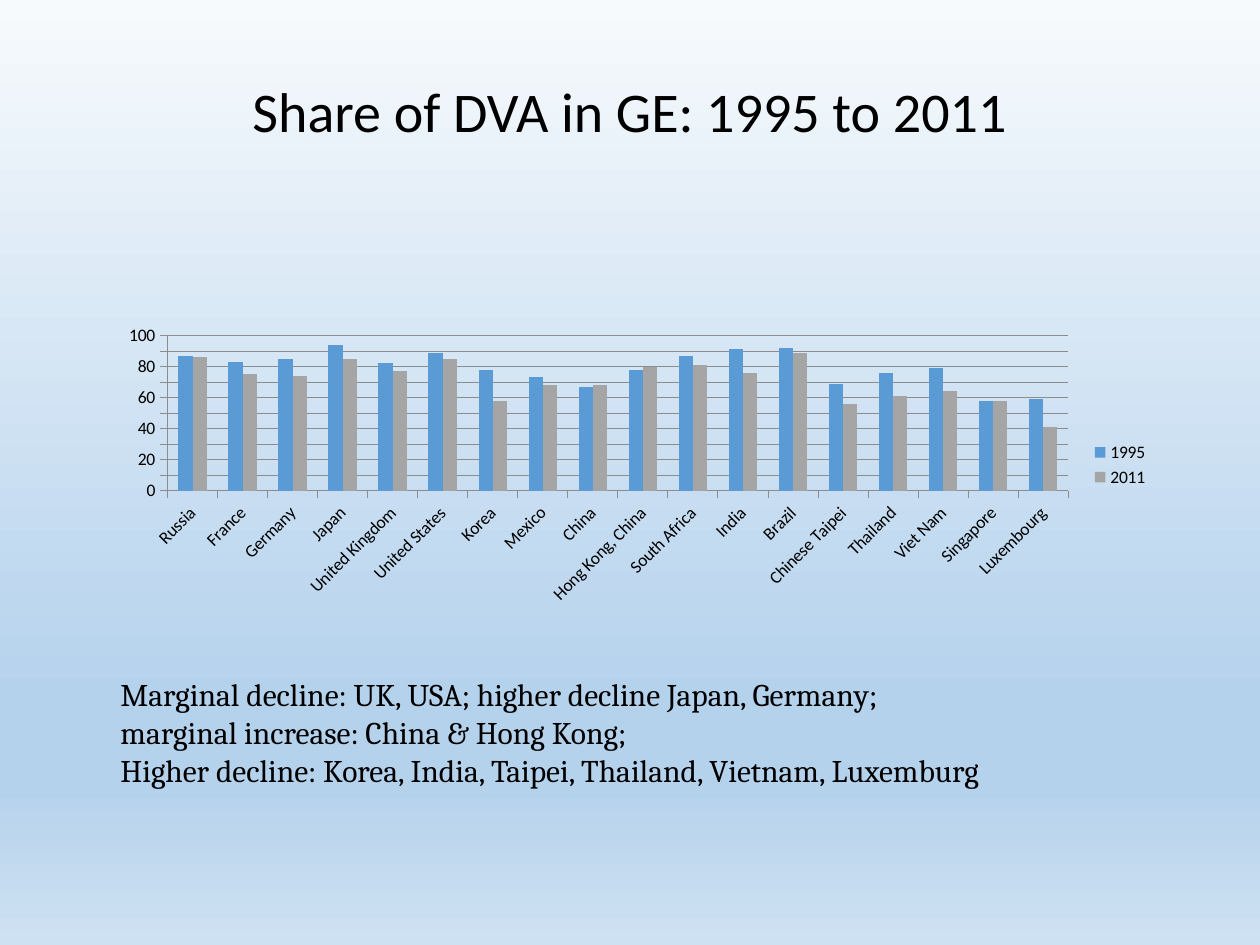
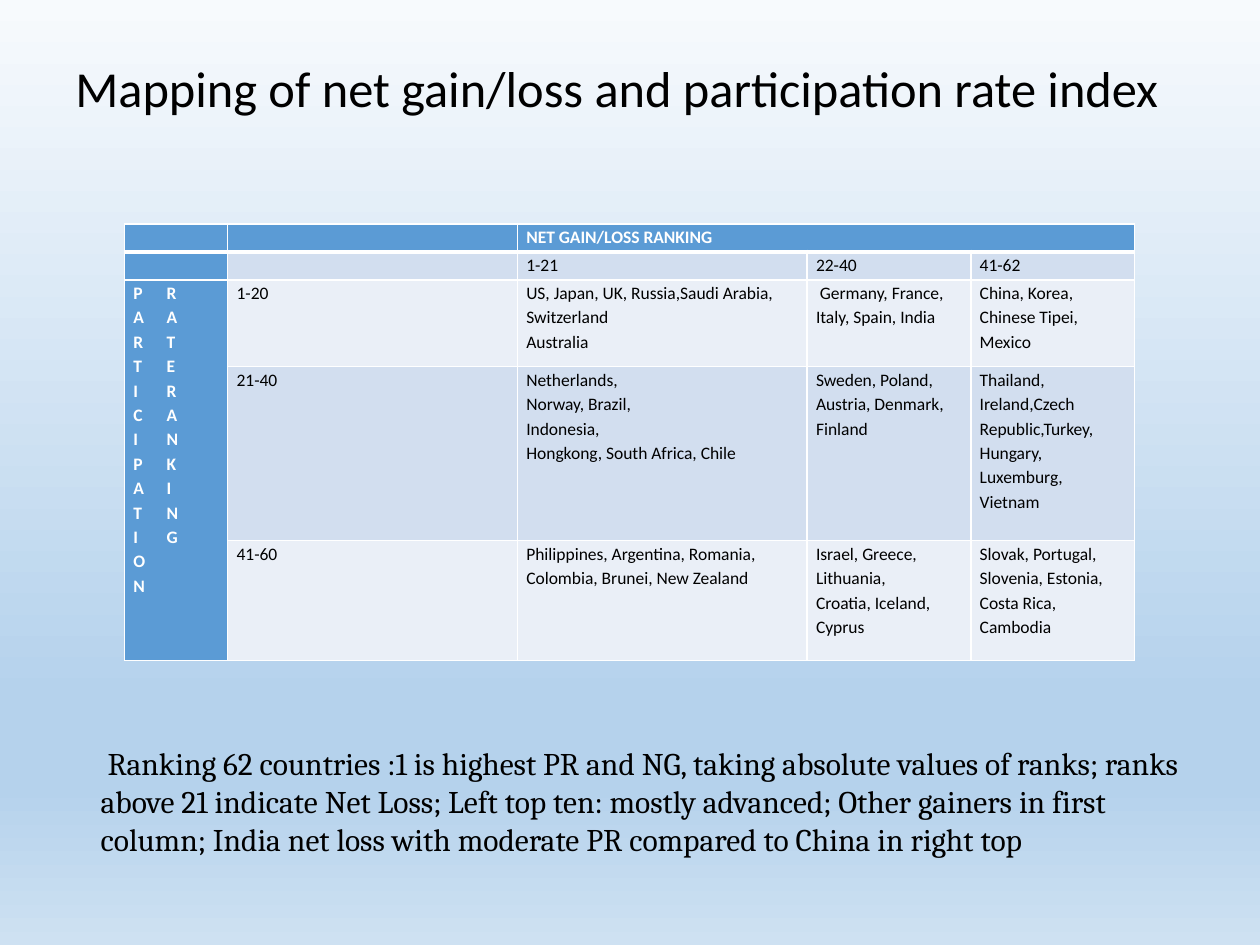
"""Build two slides on domestic value added: a country chart and a ranking table."""
from dataclasses import dataclass
from itertools import zip_longest

from lxml.etree import SubElement
from pptx import Presentation
from pptx.chart.data import CategoryChartData
from pptx.dml.color import RGBColor
from pptx.enum.chart import XL_CHART_TYPE, XL_LEGEND_POSITION, XL_TICK_MARK
from pptx.enum.text import MSO_ANCHOR, PP_ALIGN
from pptx.oxml.ns import qn
from pptx.util import Cm, Pt


@dataclass(frozen=True)
class Theme:
    head_font: str = "Calibri"
    note_font: str = "Cambria"
    text: str = "000000"
    white: str = "FFFFFF"
    accent: str = "5B9BD5"
    grey: str = "A5A5A5"
    axis: str = "8C8C8C"
    bands: tuple = ("D2DEEF", "EAEFF7")
    backdrop: tuple = ((0, "F7FAFD"), (74, "B5D2EC"), (83, "B5D2EC"), (100, "CEE1F2"))
    note_size: float = 18
    small_size: float = 10


T = Theme()

SHARE = {
    "title": "Share of DVA in GE: 1995 to 2011",
    "series": ("1995", "2011"),
    "values": [
        ("Russia", 87, 86), ("France", 83, 75), ("Germany", 85, 74),
        ("Japan", 94, 85), ("United Kingdom", 82, 77), ("United States", 89, 85),
        ("Korea", 78, 58), ("Mexico", 73, 68), ("China", 67, 68),
        ("Hong Kong, China", 78, 80), ("South Africa", 87, 81), ("India", 91, 76),
        ("Brazil", 92, 89), ("Chinese Taipei", 69, 56), ("Thailand", 76, 61),
        ("Viet Nam", 79, 64), ("Singapore", 58, 58), ("Luxembourg", 59, 41),
    ],
    "note": [
        "Marginal decline: UK, USA; higher decline Japan, Germany;",
        "marginal increase: China & Hong Kong;",
        "Higher decline: Korea, India, Taipei, Thailand, Vietnam, Luxemburg",
    ],
}

SIDE_WORDS = ("PARTICIPATION", "RATERANKING")
MAPPING = {
    "title": "Mapping of net gain/loss and participation rate index",
    "columns": (2.08, 5.84, 5.84, 3.3, 3.3),
    "rows": (0.56, 0.56, 1.75, 3.51, 2.41),
    "cells": [
        ["", "", "NET GAIN/LOSS RANKING", "", ""],
        ["", "", "1-21", "22-40", "41-62"],
        ["\n".join("\t".join(pair).rstrip() for pair in zip_longest(*SIDE_WORDS, fillvalue="")),
         "1-20", "US, Japan, UK, Russia,Saudi Arabia, Switzerland\nAustralia",
         " Germany, France, Italy, Spain, India", "China, Korea, Chinese Tipei, Mexico"],
        ["", "21-40", "Netherlands,\nNorway, Brazil,\nIndonesia,\nHongkong, South Africa, Chile",
         "Sweden, Poland, Austria, Denmark, Finland",
         "Thailand, Ireland,Czech Republic,Turkey, Hungary, Luxemburg, Vietnam"],
        ["", "41-60", "Philippines, Argentina, Romania, Colombia, Brunei, New Zealand",
         "Israel, Greece, Lithuania,\nCroatia, Iceland, Cyprus",
         "Slovak, Portugal, Slovenia, Estonia, Costa Rica, Cambodia"],
    ],
    "note": [
        " Ranking 62 countries :1 is highest PR and NG, taking absolute values of ranks; "
        "ranks above 21 indicate Net Loss; Left top ten: mostly advanced; Other gainers in "
        "first column; India net loss with moderate PR compared to China in right top",
    ],
}


def rgb(color):
    return RGBColor.from_string(color)


def style_font(font, name, size, color=T.text, bold=False):
    font.name, font.size, font.bold = name, Pt(size), bold
    font.color.rgb = rgb(color)


def write_lines(tf, lines, spacing=None, align=None, **style):
    for i, line in enumerate(lines):
        p = tf.paragraphs[0] if i == 0 else tf.add_paragraph()
        p.line_spacing, p.alignment = spacing, align
        if line:
            r = p.add_run()
            r.text = line
            style_font(r.font, **style)


def add_text(s, box, lines, anchor=MSO_ANCHOR.TOP, **style):
    tf = s.shapes.add_textbox(*map(Cm, box)).text_frame
    tf.word_wrap, tf.vertical_anchor = True, anchor
    write_lines(tf, lines, **style)


def add_title(s, box, title, size, align=PP_ALIGN.LEFT):
    add_text(s, box, [title], MSO_ANCHOR.MIDDLE, spacing=0.9, align=align,
             name=T.head_font, size=size)


def add_note(s, box, lines):
    add_text(s, box, lines, name=T.note_font, size=T.note_size)


def paint_backdrop(master):
    fill = master.background.fill
    fill.gradient()
    fill.gradient_angle = 270
    stops = master.element.find(".//" + qn("a:gsLst"))
    stops.clear()
    for pos, color in T.backdrop:
        stop = SubElement(stops, qn("a:gs"), pos=str(pos * 1000))
        SubElement(stop, qn("a:srgbClr"), val=color)


def line_style(line):
    line.color.rgb, line.width = rgb(T.axis), Pt(0.5)


def add_share_chart(s, box):
    data = CategoryChartData()
    names, *columns = zip(*SHARE["values"])
    data.categories = names
    for year, values in zip(SHARE["series"], columns):
        data.add_series(year, values)
    chart = s.shapes.add_chart(XL_CHART_TYPE.COLUMN_CLUSTERED, *map(Cm, box), data).chart
    style_font(chart.font, T.head_font, T.small_size)
    chart.has_title = False
    chart.has_legend = True
    chart.legend.position = XL_LEGEND_POSITION.RIGHT
    chart.legend.include_in_layout = False
    style_font(chart.legend.font, T.head_font, T.small_size)

    plot = chart.plots[0]
    plot.gap_width, plot.overlap, plot.vary_by_categories = 150, 0, False
    for series, color in zip(plot.series, (T.accent, T.grey)):
        series.format.fill.solid()
        series.format.fill.fore_color.rgb = rgb(color)

    for axis in (chart.category_axis, chart.value_axis):
        axis.major_tick_mark = XL_TICK_MARK.OUTSIDE
        axis.minor_tick_mark = XL_TICK_MARK.NONE
        line_style(axis.format.line)
        style_font(axis.tick_labels.font, T.head_font, T.small_size)
    scale = chart.value_axis
    scale.minimum_scale, scale.maximum_scale, scale.major_unit = 0, 100, 10
    scale.has_major_gridlines = True
    line_style(scale.major_gridlines.format.line)
    for body in chart.element.xpath("c:chart/c:plotArea/c:catAx/c:txPr/a:bodyPr"):
        body.set("rot", "-2700000")


def add_borders(cell, top, bottom):
    tcPr = cell._tc.get_or_add_tcPr()
    for side, width in (("L", 1), ("R", 1), ("T", top), ("B", bottom)):
        ln = SubElement(tcPr, qn("a:ln" + side), w=str(Pt(width)))
        SubElement(SubElement(ln, qn("a:solidFill")), qn("a:srgbClr"), val=T.white)


def set_tab(p, position):
    tabs = SubElement(p._p.get_or_add_pPr(), qn("a:tabLst"))
    SubElement(tabs, qn("a:tab"), pos=str(position), algn="l")


def fill_cell(cell, text, row, col):
    header = row == 0 or col == 0
    add_borders(cell, 3 if row == 1 else 1, 3 if row == 0 else 1)
    cell.fill.solid()
    cell.fill.fore_color.rgb = rgb(T.accent if header else T.bands[(row + 1) % 2])
    cell.margin_left = cell.margin_right = Cm(0.18)
    cell.margin_top = cell.margin_bottom = 0
    write_lines(cell.text_frame, text.split("\n"), spacing=1.15, name=T.head_font,
                size=T.small_size, color=T.white if header else T.text, bold=header)
    for p in cell.text_frame.paragraphs:
        if "\t" in p.text:
            set_tab(p, Cm(0.67))
        if not p.text:
            SubElement(p._p, qn("a:endParaRPr"), sz=str(T.small_size * 100))


def add_mapping_table(s, left, top):
    widths, heights, cells = MAPPING["columns"], MAPPING["rows"], MAPPING["cells"]
    table = s.shapes.add_table(len(heights), len(widths), Cm(left), Cm(top),
                               Cm(sum(widths)), Cm(sum(heights))).table
    table.first_row = table.horz_banding = False
    for column, width in zip(table.columns, widths):
        column.width = Cm(width)
    for row, height in zip(table.rows, heights):
        row.height = Cm(height)
    for i, texts in enumerate(cells):
        for j, text in enumerate(texts):
            fill_cell(table.cell(i, j), text, i, j)
    table.cell(0, 2).merge(table.cell(0, 4))
    table.cell(2, 0).merge(table.cell(4, 0))


def main():
    prs = Presentation()
    prs.slide_width, prs.slide_height = Cm(25.4), Cm(19.05)
    paint_backdrop(prs.slide_master)
    blank = prs.slide_layouts[6]

    s = prs.slides.add_slide(blank)
    add_title(s, (1.75, 1.02, 21.9, 2.57), SHARE["title"], 32, PP_ALIGN.CENTER)
    add_share_chart(s, (2.18, 6.45, 21.23, 5.84))
    add_note(s, (2.18, 13.49, 20.83, 2.57), SHARE["note"])

    s = prs.slides.add_slide(blank)
    add_title(s, (1.27, 0.76, 22.86, 2.16), MAPPING["title"], 28.8)
    add_mapping_table(s, 2.51, 4.52)
    add_note(s, (1.78, 14.88, 22.81, 2.57), MAPPING["note"])

    prs.save("out.pptx")


if __name__ == "__main__":
    main()
